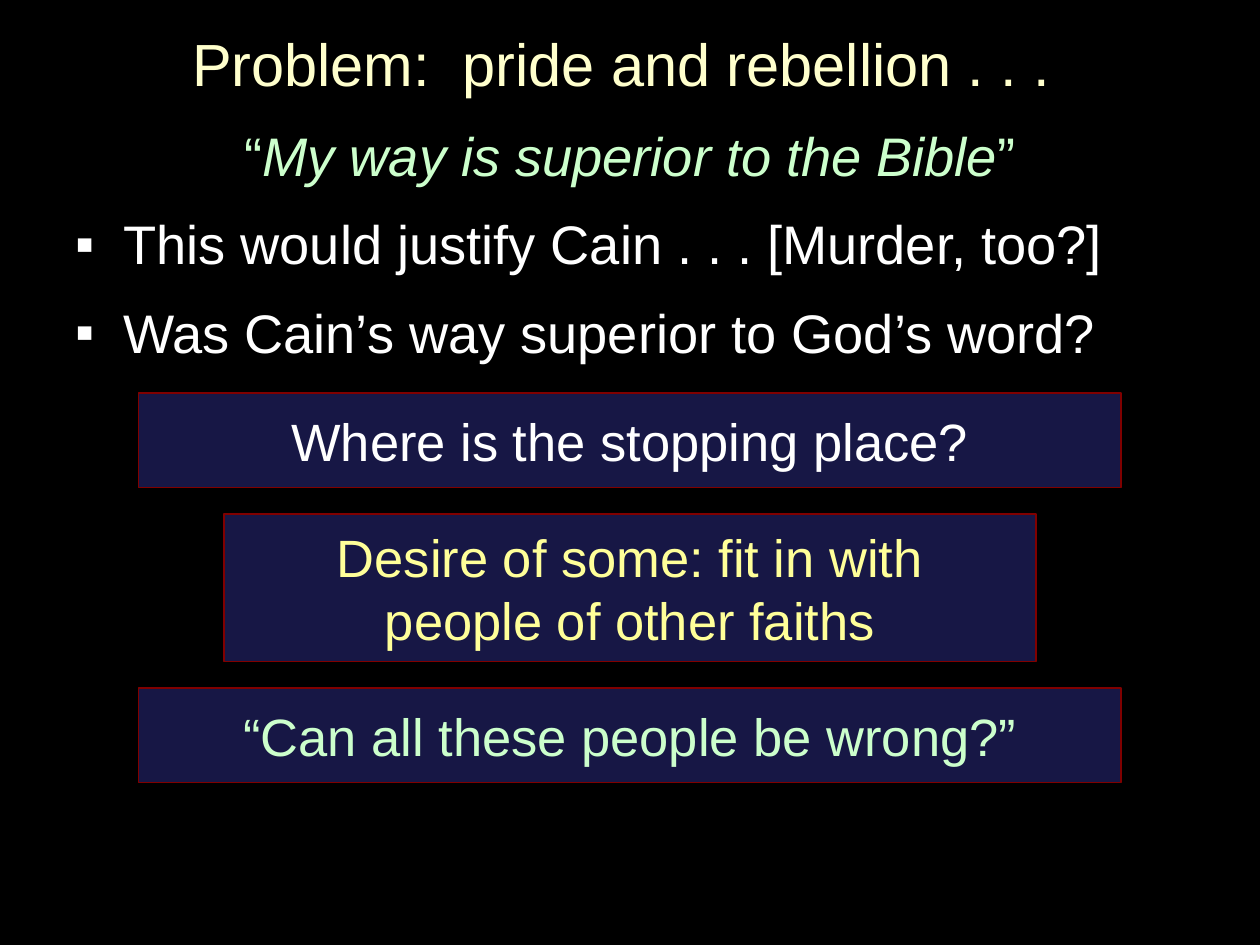
from dataclasses import dataclass

from lxml.etree import SubElement
from pptx import Presentation
from pptx.dml.color import RGBColor
from pptx.enum.shapes import MSO_SHAPE
from pptx.enum.text import MSO_ANCHOR, PP_ALIGN
from pptx.oxml.ns import qn
from pptx.slide import Slide
from pptx.text.text import _Paragraph
from pptx.util import Inches, Pt

WIDTH, HEIGHT = Inches(10), Inches(7.5)
FONT = "Arial"
BLACK = RGBColor(0x00, 0x00, 0x00)
WHITE = RGBColor(0xFF, 0xFF, 0xFF)
CREAM = RGBColor(0xFF, 0xFF, 0xCC)
YELLOW = RGBColor(0xFF, 0xFF, 0x99)
MINT = RGBColor(0xCC, 0xFF, 0xCC)
NAVY = RGBColor(0x17, 0x17, 0x45)
MAROON = RGBColor(0x80, 0x00, 0x00)


@dataclass(frozen=True)
class Panel:
    """A centred box, with its top, width and height as shares of the slide."""
    lines: tuple[str, ...]
    color: RGBColor
    top: float
    width: float
    height: float


@dataclass(frozen=True)
class Point:
    """A bulleted statement and the space after it in points."""
    text: str
    space_after: float


PANELS = (
    Panel(("Where is the stopping place?",), WHITE, 0.416, 0.78, 0.1),
    Panel(("Desire of some: fit in with", "people of other faiths"), YELLOW, 0.544, 0.645, 0.156),
    Panel(("“Can all these people be wrong?”",), MINT, 0.728, 0.78, 0.1),
)
POINTS = (
    Point("This would justify Cain . . . [Murder, too?]", 6),
    Point("Was Cain’s way superior to God’s word?", 18),
)


def add_text(paragraph: _Paragraph, text: str, size: float, color: RGBColor, italic: bool = False) -> None:
    """Append one formatted run."""
    run = paragraph.add_run()
    run.text = text
    run.font.name = FONT
    run.font.size = Pt(size)
    run.font.color.rgb = color
    run.font.italic = italic


def set_bullet(paragraph: _Paragraph) -> None:
    """Give a paragraph a square bullet with a hanging indent."""
    properties = paragraph._p.get_or_add_pPr()
    properties.set("marL", str(Inches(0.38)))
    properties.set("indent", str(-Inches(0.38)))
    SubElement(properties, qn("a:buFont"), typeface=FONT)
    SubElement(properties, qn("a:buChar"), char="▪")


def add_title(slide: Slide) -> None:
    """Place and fill the title placeholder."""
    title = slide.shapes.title
    title.left, title.top = int(WIDTH * 0.05), 0
    title.width, title.height = int(WIDTH * 0.9), Inches(1)
    title.text_frame.vertical_anchor = MSO_ANCHOR.MIDDLE
    paragraph = title.text_frame.paragraphs[0]
    paragraph.alignment = PP_ALIGN.CENTER
    add_text(paragraph, "Problem:  pride and rebellion . . . ", 34, CREAM)


def add_body(slide: Slide) -> None:
    """Add the quotation and the bulleted points."""
    body = slide.shapes.add_textbox(int(WIDTH * 0.05), Inches(0.92), int(WIDTH * 0.9), Inches(6.33))
    frame = body.text_frame
    frame.word_wrap = True
    quotation = frame.paragraphs[0]
    quotation.alignment = PP_ALIGN.CENTER
    quotation.space_before, quotation.space_after = Pt(7.4), Pt(6)
    add_text(quotation, "“", 31, MINT)
    add_text(quotation, "My way is superior to the Bible", 31, MINT, italic=True)
    add_text(quotation, "”", 31, MINT)
    for point in POINTS:
        paragraph = frame.add_paragraph()
        paragraph.space_before, paragraph.space_after = Pt(7.4), Pt(point.space_after)
        set_bullet(paragraph)
        add_text(paragraph, point.text, 31, WHITE)


def add_panel(slide: Slide, panel: Panel) -> None:
    """Draw one bordered panel centred on the slide."""
    shape = slide.shapes.add_shape(
        MSO_SHAPE.RECTANGLE, int(WIDTH * (1 - panel.width) / 2), int(HEIGHT * panel.top),
        int(WIDTH * panel.width), int(HEIGHT * panel.height))
    shape.shadow.inherit = False
    shape.fill.solid()
    shape.fill.fore_color.rgb = NAVY
    shape.line.color.rgb = MAROON
    shape.line.width = Pt(1)
    frame = shape.text_frame
    frame.word_wrap = True
    frame.vertical_anchor = MSO_ANCHOR.MIDDLE
    paragraph = frame.paragraphs[0]
    paragraph.alignment = PP_ALIGN.CENTER
    for index, line in enumerate(panel.lines):
        if index:
            paragraph.add_line_break()
        add_text(paragraph, line, 30, panel.color)


def main() -> None:
    """Build and save the presentation."""
    presentation = Presentation()
    presentation.slide_width, presentation.slide_height = WIDTH, HEIGHT
    slide = presentation.slides.add_slide(presentation.slide_layouts[5])
    slide.background.fill.solid()
    slide.background.fill.fore_color.rgb = BLACK
    add_title(slide)
    add_body(slide)
    for panel in PANELS:
        add_panel(slide, panel)
    presentation.save("out.pptx")


if __name__ == "__main__":
    main()
